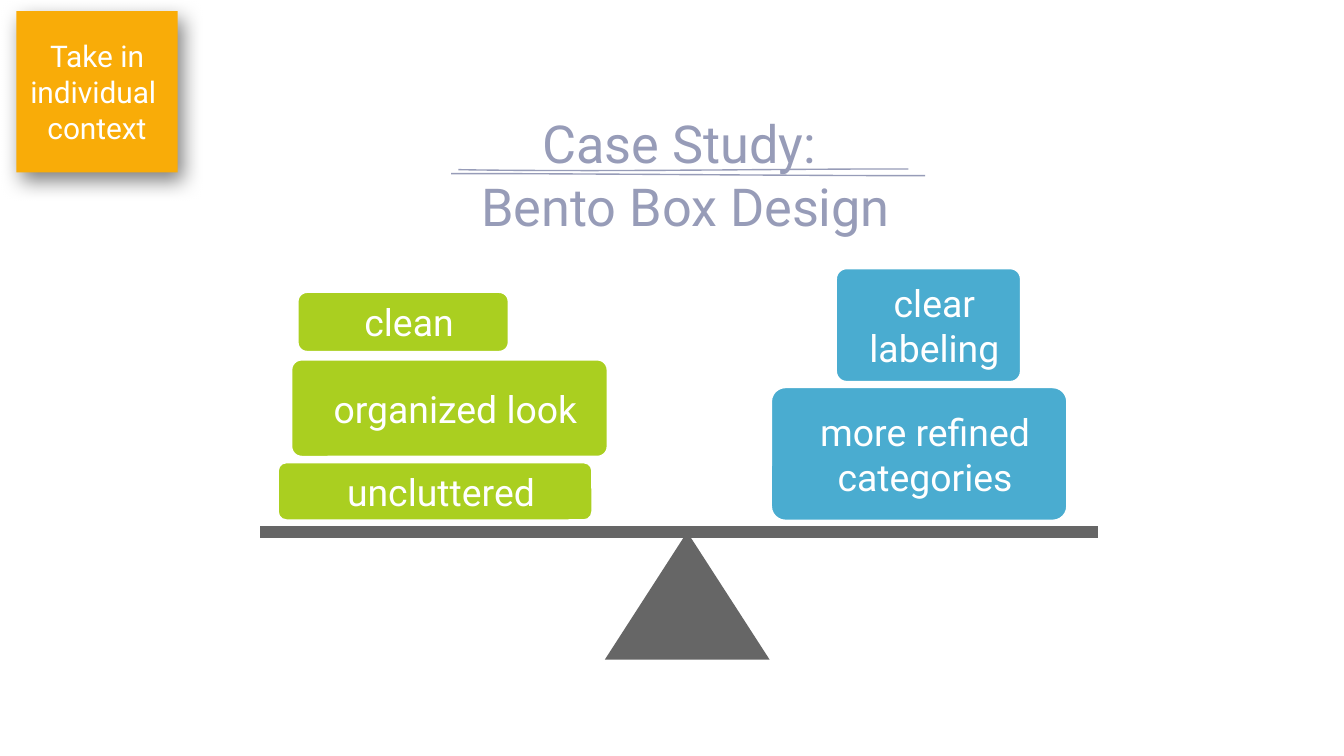
from dataclasses import dataclass

from lxml import etree
from pptx import Presentation
from pptx.dml.color import RGBColor
from pptx.enum.shapes import MSO_CONNECTOR as CONN, MSO_SHAPE as SHAPE
from pptx.enum.text import MSO_ANCHOR as ANCHOR, PP_ALIGN as ALIGN
from pptx.oxml import parse_xml
from pptx.oxml.ns import nsdecls, qn
from pptx.util import Pt


@dataclass(frozen=True)
class Theme:
    font: str = "Roboto"
    title: str = "979CB8"
    note: str = "F9AC08"
    scale: str = "666666"
    left: str = "AACF20"
    right: str = "4AACD0"
    white: str = "FFFFFF"
    title_size: int = 28
    note_size: int = 16
    block_size: int = 20


def rgb(value):
    return RGBColor.from_string(value)


def bezier(points, steps=24):
    """Sample a cubic curve given by four (x, y) points."""
    weights = (1, 3, 3, 1)
    return [
        tuple(
            Pt(sum(w * (1 - t) ** (3 - i) * t**i * p[axis]
                   for i, (w, p) in enumerate(zip(weights, points))))
            for axis in (0, 1)
        )
        for t in (n / steps for n in range(steps + 1))
    ]


class SlideBuilder:
    def __init__(self, slide, theme):
        self.s = slide
        self.theme = theme

    def set_text(self, sp, lines, size, color, anchor=ANCHOR.MIDDLE, inset=None, indent=0):
        tf = sp.text_frame
        tf.word_wrap = True
        tf.vertical_anchor = anchor
        if inset is not None:
            tf.margin_left = tf.margin_right = Pt(inset)
            tf.margin_top = tf.margin_bottom = Pt(inset)
        tf.text = "\n".join(lines)
        for p in tf.paragraphs:
            p.alignment = ALIGN.CENTER
            if indent:
                p._p.get_or_add_pPr().set("marL", str(Pt(indent)))
            for r in p.runs:
                r.font.name = self.theme.font
                r.font.size = Pt(size)
                r.font.color.rgb = rgb(color)

    def shape(self, kind, box, fill):
        sp = self.s.shapes.add_shape(kind, *map(Pt, box))
        sp.shadow.inherit = False
        sp.fill.solid()
        sp.fill.fore_color.rgb = rgb(fill)
        sp.line.fill.background()
        return sp

    def title(self, box, lines):
        sp = self.s.shapes.add_textbox(*map(Pt, box))
        self.set_text(sp, lines, self.theme.title_size, self.theme.title, ANCHOR.BOTTOM, 5)

    def stroke(self, points):
        """Draw a thin, slightly bowed line under the title."""
        start, *rest = bezier(points)
        builder = self.s.shapes.build_freeform(*start, scale=1.0)
        builder.add_line_segments(rest, close=False)
        sp = builder.convert_to_shape()
        sp.shadow.inherit = False
        sp.fill.background()
        sp.line.color.rgb = rgb(self.theme.title)
        sp.line.width = Pt(0.75)

    def sticky_note(self, box, lines):
        sp = self.shape(SHAPE.RECTANGLE, box, self.theme.note)
        self.set_text(sp, lines, self.theme.note_size, self.theme.white, inset=5)
        effects = sp._element.spPr.find(qn("a:effectLst"))
        effects.append(parse_xml(
            f'<a:outerShdw {nsdecls("a")} blurRad="{Pt(11.2)}" dist="{Pt(5.2)}" '
            f'dir="{61 * 60000}" algn="bl" rotWithShape="0"><a:srgbClr val="000000">'
            '<a:alpha val="50000"/></a:srgbClr></a:outerShdw>'
        ))

    def block(self, box, text, fill, corner):
        sp = self.shape(SHAPE.ROUNDED_RECTANGLE, box, fill)
        sp.adjustments[0] = corner
        sp.line.color.rgb = rgb(self.theme.white)
        sp.line.width = Pt(2)
        self.set_text(sp, [text], self.theme.block_size, self.theme.white, indent=6.5)

    def beam(self, x1, x2, y):
        line = self.s.shapes.add_connector(CONN.STRAIGHT, Pt(x1), Pt(y), Pt(x2), Pt(y))
        line.line.color.rgb = rgb(self.theme.scale)
        line.line.width = Pt(6)
        etree.SubElement(line._element.spPr, qn("a:effectLst"))

    def pivot(self, box):
        self.shape(SHAPE.ISOSCELES_TRIANGLE, box, self.theme.scale)


def main():
    prs = Presentation()
    prs.slide_width, prs.slide_height = Pt(720), Pt(405)
    theme = Theme()
    b = SlideBuilder(prs.slides.add_slide(prs.slide_layouts[6]), theme)

    b.stroke([(245.5, 90.9), (326, 92.2), (406, 90.5), (486.6, 90.5)])
    b.stroke([(241.7, 93), (326, 93), (411, 94.1), (495.6, 94.1)])
    b.title((155.5, 77.8, 423.4, 54), ["Case Study: ", "Bento Box Design"])
    b.sticky_note((8.8, 6, 86.4, 86.4), ["Take in individual ", "context"])

    beam_y = 285
    b.pivot((324, beam_y, 88.3, 68.4))
    b.beam(139.5, 588, beam_y)

    blocks = [
        ((159, 156, 114, 33), "clean", theme.left, 0.167),
        ((155.6, 192.2, 170.4, 53), "organized look", theme.left, 0.113),
        ((148.4, 247.2, 169.4, 32), "uncluttered", theme.left, 0.157),
        ((447.4, 143.3, 100, 61.8), "clear labeling", theme.right, 0.1),
        ((412.6, 207, 159.6, 72.4), "more refined categories", theme.right, 0.113),
    ]
    for block in blocks:
        b.block(*block)

    prs.save("out.pptx")


if __name__ == "__main__":
    main()
